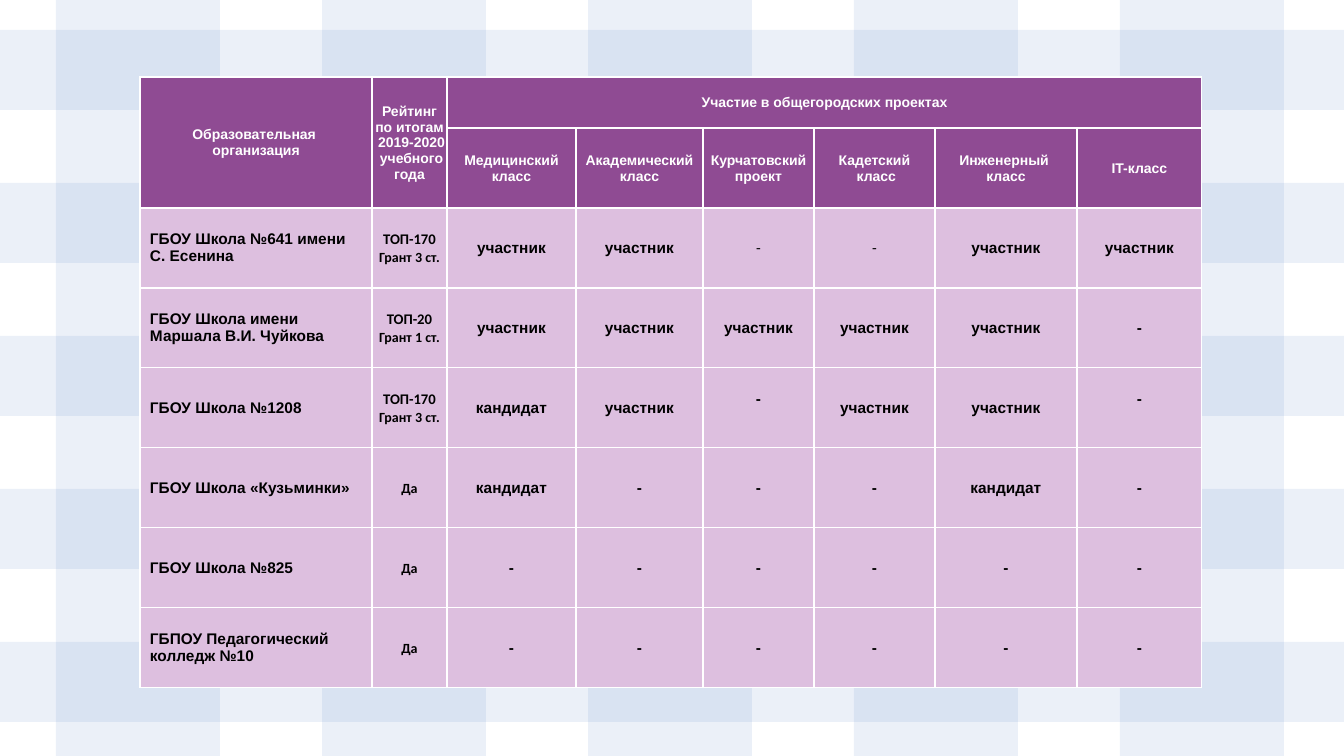
from lxml import etree
from pptx import Presentation
from pptx.dml.color import RGBColor
from pptx.enum.shapes import MSO_SHAPE
from pptx.enum.text import MSO_ANCHOR, PP_ALIGN
from pptx.oxml.ns import qn
from pptx.util import Pt

PX = 914400 / 100.8
SLIDE_W, SLIDE_H = 1344, 756
PURPLE, LILAC, WHITE, BLACK, BLUE = "8F4B93", "DDBFDF", "FFFFFF", "000000", "4472C4"

COL_WIDTHS = [232, 75, 129, 127, 111, 121, 142, 125]
ROW_HEIGHTS = [51, 80] + [80] * 6

# In cell text \n starts a paragraph and \v breaks a line
TOP_HEADERS = ["Образовательная \vорганизация",
               "Рейтинг\nпо итогам\n 2019-2020\n учебного года",
               "Участие в общегородских проектах"]
PROJECTS = ["Медицинский класс", "Академический класс", "Курчатовский проект",
            "Кадетский\v класс", "Инженерный \vкласс", "IT-класс"]
MEMBER, CANDIDATE, NONE = "участник", "кандидат", "-"
SCHOOLS = [
    ("ГБОУ Школа №641 имени \vС. Есенина", "ТОП-170\nГрант 3 ст.",
     [MEMBER, MEMBER, NONE, NONE, MEMBER, MEMBER]),
    ("ГБОУ Школа имени \vМаршала В.И. Чуйкова", "ТОП-20\nГрант 1 ст.",
     [MEMBER] * 5 + [NONE]),
    ("ГБОУ Школа №1208", "ТОП-170\nГрант 3 ст.",
     [CANDIDATE, MEMBER, NONE, MEMBER, MEMBER, NONE]),
    ("ГБОУ Школа «Кузьминки»", "Да",
     [CANDIDATE, NONE, NONE, NONE, CANDIDATE, NONE]),
    ("ГБОУ Школа №825", "Да", [NONE] * 6),
    ("ГБПОУ Педагогический колледж №10", "Да", [NONE] * 6),
]
LIGHT_DASH_ROW, RAISED_DASH_ROW = 0, 2


def px(n):
    return round(n * PX)


def rgb(color):
    return RGBColor.from_string(color)


def add_stripe(group, x, y, w, h):
    sp = group.shapes.add_shape(MSO_SHAPE.RECTANGLE, px(x), px(y), px(w), px(h))
    sp.shadow.inherit = False
    sp.line.fill.background()
    sp.fill.solid()
    sp.fill.fore_color.rgb = rgb(BLUE)
    clr = sp.fill._xPr.find(f".//{qn('a:srgbClr')}")
    etree.SubElement(clr, qn("a:alpha"), val="10000")


def add_checks(s, x, y, w, h):
    """Five vertical and five horizontal translucent stripes across the box."""
    group = s.shapes.add_group_shape()
    for i in range(5):
        add_stripe(group, x + 56 + 266 * i, y, 164, h)
        add_stripe(group, x, y + 30 + 153 * i, w, 80)


def style_cell(cell, fill):
    """White 1 pt borders, then the fill, then the anchor and margins."""
    tc_pr = cell._tc.get_or_add_tcPr()
    for side in ("lnL", "lnR", "lnT", "lnB"):
        ln = etree.SubElement(tc_pr, qn(f"a:{side}"), w=str(Pt(1)))
        solid = etree.SubElement(ln, qn("a:solidFill"))
        etree.SubElement(solid, qn("a:srgbClr"), val=WHITE)
    cell.fill.solid()
    cell.fill.fore_color.rgb = rgb(fill)
    cell.vertical_anchor = MSO_ANCHOR.MIDDLE
    cell.margin_left = cell.margin_right = cell.margin_top = px(1)
    cell.margin_bottom = 0


def write(cell, text, size, color=BLACK, font="Arial", bold=True, align=PP_ALIGN.CENTER):
    cell.text_frame.text = text
    for p in cell.text_frame.paragraphs:
        p.alignment = align
        for r in p.runs:
            r.font.name = font
            r.font.size = Pt(size)
            r.font.bold = bold
            r.font.color.rgb = rgb(color)


def roomy(cell):
    cell.margin_left = cell.margin_right = px(10)
    cell.margin_top = cell.margin_bottom = px(5)


def fill_header(table):
    for col, text in enumerate(TOP_HEADERS):
        write(table.cell(0, col), text, 10, WHITE)
    for col, text in enumerate(PROJECTS, start=2):
        write(table.cell(1, col), text, 10, WHITE)
    roomy(table.cell(0, 0))
    for col in (0, 1):
        table.cell(0, col).merge(table.cell(1, col))
    table.cell(0, 2).merge(table.cell(0, 7))


def fill_schools(table):
    for i, (school, rating, statuses) in enumerate(SCHOOLS):
        row = i + 2
        name_cell, rating_cell = table.cell(row, 0), table.cell(row, 1)
        roomy(name_cell)
        write(name_cell, school, 11, align=PP_ALIGN.LEFT)
        write(rating_cell, rating, 10, font="Calibri")
        if rating.startswith("ТОП"):
            rating_cell.text_frame.paragraphs[0].runs[0].font.size = Pt(10.5)
        for col, status in enumerate(statuses, start=2):
            cell = table.cell(row, col)
            light = status == NONE and i == LIGHT_DASH_ROW
            write(cell, status, 11, font="Calibri" if light else "Arial", bold=not light)
            if status == NONE and i == RAISED_DASH_ROW:
                cell.margin_bottom = px(18)


def add_projects_table(s, x, y, w, h):
    table = s.shapes.add_table(len(ROW_HEIGHTS), len(COL_WIDTHS),
                               px(x), px(y), px(w), px(h)).table
    table.first_row = table.horz_banding = False
    for column, width in zip(table.columns, COL_WIDTHS):
        column.width = px(width)
    for i, (row, height) in enumerate(zip(table.rows, ROW_HEIGHTS)):
        row.height = px(height)
        for cell in row.cells:
            style_cell(cell, PURPLE if i < 2 else LILAC)
    fill_header(table)
    fill_schools(table)


def main():
    prs = Presentation()
    prs.slide_width, prs.slide_height = px(SLIDE_W), px(SLIDE_H)
    s = prs.slides.add_slide(prs.slide_layouts[6])
    s.background.fill.solid()
    s.background.fill.fore_color.rgb = rgb(WHITE)
    add_checks(s, 0, 0, SLIDE_W, SLIDE_H)
    add_projects_table(s, 140, 77, sum(COL_WIDTHS), sum(ROW_HEIGHTS))
    prs.save("out.pptx")


if __name__ == "__main__":
    main()
